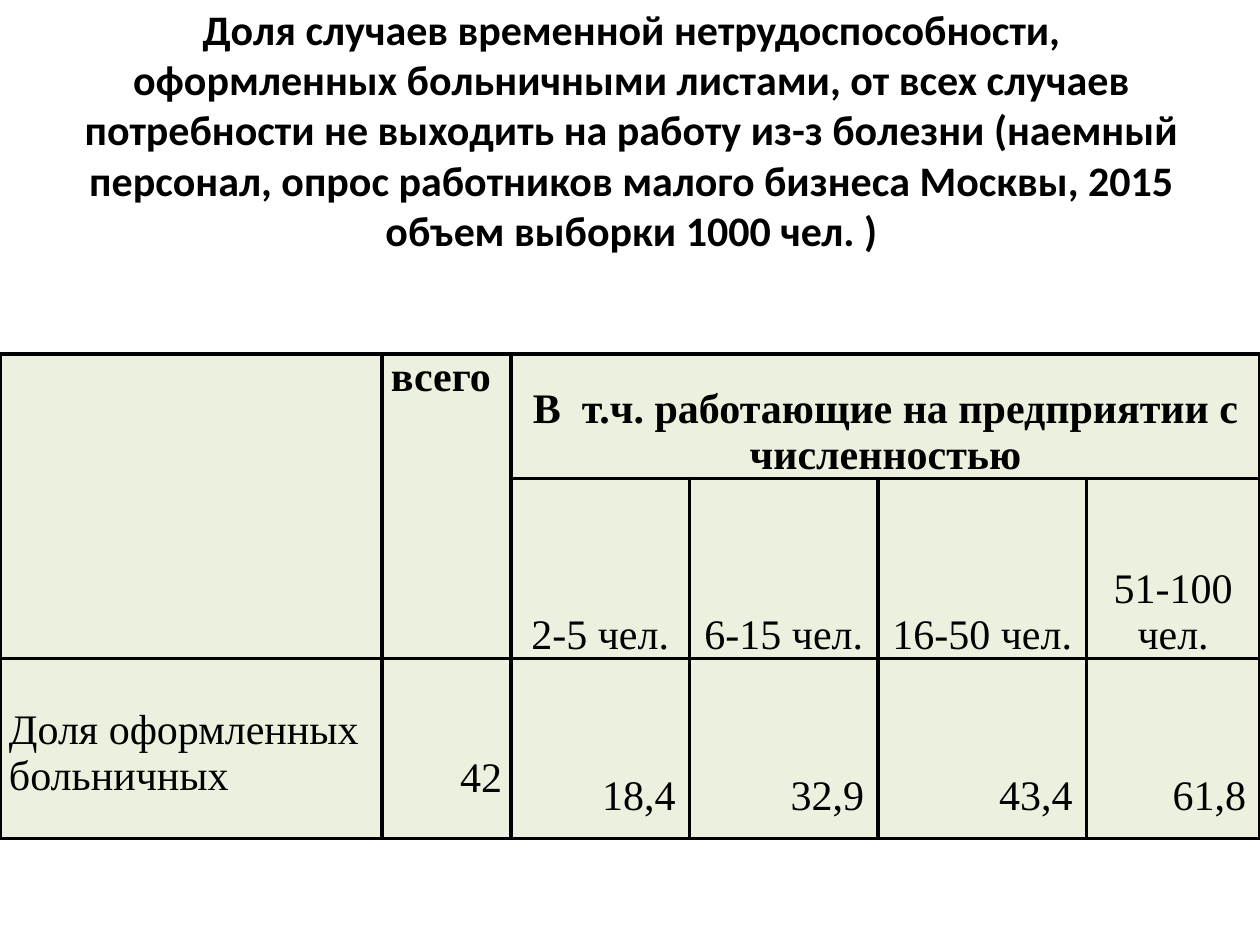
from lxml import etree
from pptx import Presentation
from pptx.dml.color import RGBColor
from pptx.enum.text import MSO_ANCHOR, MSO_AUTO_SIZE, PP_ALIGN
from pptx.oxml.ns import qn
from pptx.util import Cm, Pt

LEFT, CENTER, RIGHT = PP_ALIGN.LEFT, PP_ALIGN.CENTER, PP_ALIGN.RIGHT
TOP, MIDDLE, BOTTOM = MSO_ANCHOR.TOP, MSO_ANCHOR.MIDDLE, MSO_ANCHOR.BOTTOM
NO_FIT = MSO_AUTO_SIZE.NONE
TITLE_ONLY = 5
COLORS = {"ink": "000000", "cell": "EBF1DE"}

TITLE = (
    "Доля случаев временной нетрудоспособности, оформленных больничными "
    "листами, от всех случаев потребности не выходить на работу из-з болезни "
    "(наемный персонал, опрос работников малого бизнеса Москвы, 2015 "
    "объем выборки 1000 чел. )"
)
WIDTHS = [7.7, 2.6, 3.6, 3.8, 4.2, 3.5]
HEIGHTS = [2.51, 3.63, 3.63]
GROUPS = [
    ("2-5 чел.", "18,4"),
    ("6-15 чел.", "32,9"),
    ("16-50 чел.", "43,4"),
    ("51-100 чел.", "61,8"),
]


def write(frame, text, font="Times New Roman", size=24, bold=False, align=LEFT):
    """Put one formatted paragraph into a text frame."""
    line = frame.paragraphs[0]
    line.alignment = align
    run = line.add_run()
    run.text = text
    run.font.name = font
    run.font.size = Pt(size)
    run.font.bold = bold
    run.font.color.rgb = RGBColor.from_string(COLORS["ink"])


class Board:
    """Holds the slide and its table style."""

    def __init__(self, slide, border=2.25):
        self.slide = slide
        self.border = border

    def title(self, text, left, top, width, height):
        shape = self.slide.shapes.title
        shape.left, shape.top = Cm(left), Cm(top)
        shape.width, shape.height = Cm(width), Cm(height)
        frame = shape.text_frame
        frame.word_wrap = True
        frame.auto_size = NO_FIT
        frame.vertical_anchor = MIDDLE
        frame.margin_bottom = Cm(1.14)
        write(frame, text, font="Calibri", bold=True, align=CENTER)

    def table(self, left, top, widths, heights):
        table = self.slide.shapes.add_table(
            len(heights), len(widths), Cm(left), Cm(top),
            Cm(sum(widths)), Cm(sum(heights))).table
        table.first_row = table.horz_banding = False
        for col, width in zip(table.columns, widths):
            col.width = Cm(width)
        for row, height in zip(table.rows, heights):
            row.height = Cm(height)
        for cell in table.iter_cells():
            self.frame(cell)
            cell.fill.solid()
            cell.fill.fore_color.rgb = RGBColor.from_string(COLORS["cell"])
        return table

    def frame(self, cell):
        """Draw all four borders of a cell."""
        props = cell._tc.get_or_add_tcPr()
        for side in ("a:lnL", "a:lnR", "a:lnT", "a:lnB"):
            line = etree.SubElement(props, qn(side), w=str(Pt(self.border)))
            fill = etree.SubElement(line, qn("a:solidFill"))
            etree.SubElement(fill, qn("a:srgbClr"), val=COLORS["ink"])

    def cell(self, cell, text, anchor=TOP, side=0.18, drop=0, **style):
        """Fill a cell; drop is the space above its text."""
        cell.vertical_anchor = anchor
        cell.margin_left = cell.margin_right = Cm(side)
        cell.margin_top, cell.margin_bottom = Cm(drop), 0
        write(cell.text_frame, text, **style)


def main():
    deck = Presentation()
    deck.slide_width, deck.slide_height = Cm(25.4), Cm(19.05)
    board = Board(deck.slides.add_slide(deck.slide_layouts[TITLE_ONLY]))
    board.title(TITLE, 1.3, 0.91, 22.86, 4.4)

    table = board.table(0, 7.14, WIDTHS, HEIGHTS)
    for col in (0, 1):
        table.cell(0, col).merge(table.cell(1, col))
    table.cell(0, 2).merge(table.cell(0, 5))

    board.cell(table.cell(0, 1), "всего", bold=True)
    board.cell(table.cell(0, 2), "В  т.ч. работающие на предприятии с численностью",
               anchor=BOTTOM, side=0.28, bold=True, align=CENTER)
    board.cell(table.cell(2, 0), "Доля оформленных больничных", drop=0.97)
    board.cell(table.cell(2, 1), "42", drop=1.95, align=RIGHT)
    for col, (group, share) in enumerate(GROUPS, start=2):
        board.cell(table.cell(1, col), group, anchor=BOTTOM, side=0.28, align=CENTER)
        board.cell(table.cell(2, col), share, side=0.28, drop=2.3, align=RIGHT)

    deck.save("out.pptx")


if __name__ == "__main__":
    main()
